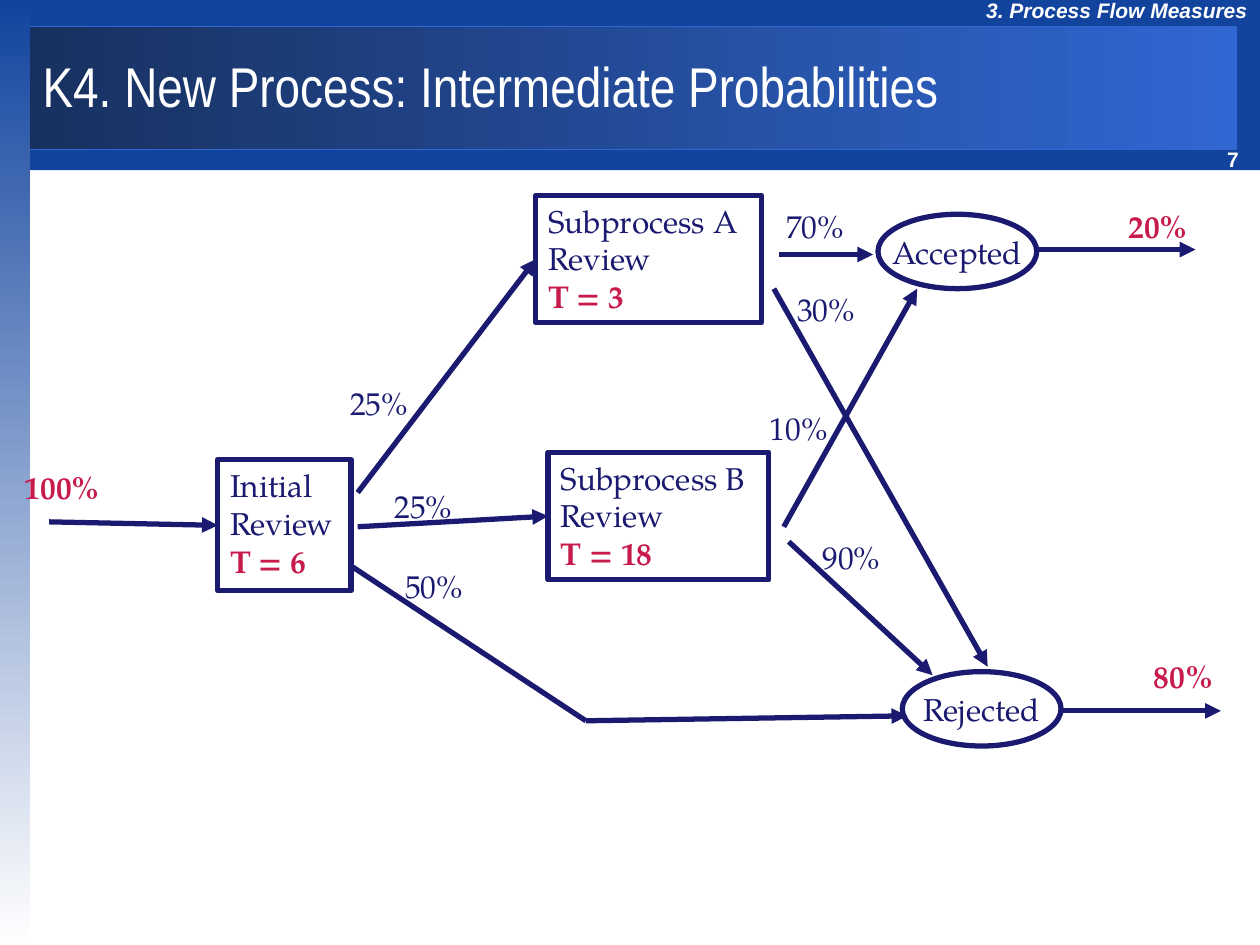
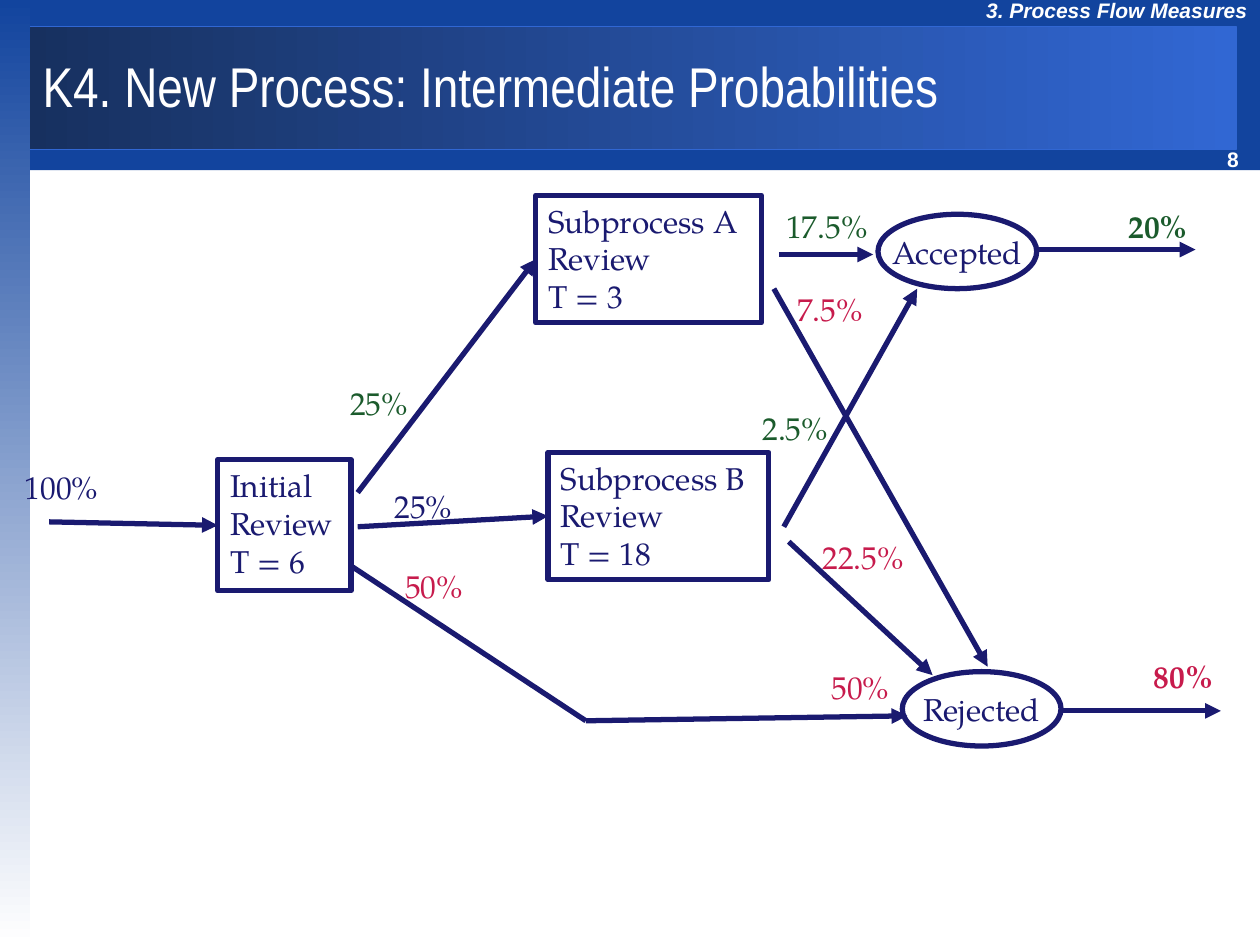
from lxml import etree
from pptx import Presentation
from pptx.dml.color import RGBColor
from pptx.enum import shapes, text
from pptx.oxml import ns
from pptx.util import Cm, Pt

NAVY, CRIMSON, GREEN, WHITE = "1A1A70", "C71B4C", "1B5B2C", "FFFFFF"
BAND, BAND_EDGE, BAND_DARK = "12449E", "3167D3", "17305F"

BODY = {"name": "TeX Gyre Pagella", "size": Pt(18), "color": NAVY}
TITLE = {"name": "Arial Narrow", "size": Pt(32), "color": WHITE}
SMALL = {"name": "Arial", "size": Pt(12), "color": WHITE, "bold": True}

STEPS = {
    "Initial": ((4.39, 9.27, 2.69, 2.64), ["Initial", "Review", "T = 6"]),
    "A": ((10.8, 3.94, 4.55, 2.57), ["Subprocess A", "Review", "T = 3"]),
    "B": ((11.05, 9.12, 4.45, 2.57), ["Subprocess B", "Review", "T = 18"]),
}
OUTCOMES = {"Accepted": (17.7, 4.32), "Rejected": (18.19, 13.54)}

# Start, end, step whose left side the arrow joins
ARROWS = [
    ((0.99, 10.52), (4.29, 10.52), "Initial"),
    ((7.21, 9.93), (10.8, 5.13), "A"),
    ((7.21, 10.62), (11, 10.52), "B"),
    ((11.81, 14.53), (18.29, 14.43), None),
    ((15.7, 5.13), (17.6, 5.13), None),
    ((15.6, 5.82), (19.91, 13.44), None),
    ((15.8, 10.62), (18.49, 5.82), None),
    ((15.9, 10.92), (18.8, 13.61), None),
    ((20.9, 5.03), (24.1, 5.03), None),
    ((21.41, 14.33), (24.61, 14.33), None),
]
BYPASS = ((7.11, 11.43), (11.81, 14.53))

# x, y, share of the label's width that lies left of x
LABEL_SPOTS = {
    "in": (0.25, 9.32, 0),
    "to A": (6.81, 7.62, 0),
    "to B": (7.7, 9.7, 0),
    "straight to rejected": (7.92, 11.3, 0),
    "bypass end": (16.51, 13.34, 0),
    "A accepted": (15.6, 4.04, 0),
    "A rejected": (15.82, 5.72, 0),
    "B accepted": (16.97, 8.13, 1),
    "B rejected": (16.33, 10.72, 0),
    "all accepted": (22.5, 4.04, 0),
    "all rejected": (23.01, 13.13, 0),
}

BRANCH_SHARES = {
    "in": ("100%", CRIMSON, True),
    "to A": ("25%", NAVY, False),
    "to B": ("25%", NAVY, False),
    "straight to rejected": ("50%", NAVY, False),
    "A accepted": ("70%", NAVY, False),
    "A rejected": ("30%", NAVY, False),
    "B accepted": ("10%", NAVY, False),
    "B rejected": ("90%", NAVY, False),
    "all accepted": ("20%", CRIMSON, True),
    "all rejected": ("80%", CRIMSON, True),
}
TOTAL_SHARES = {
    "in": ("100%", NAVY, False),
    "to A": ("25%", GREEN, False),
    "to B": ("25%", NAVY, False),
    "straight to rejected": ("50%", CRIMSON, False),
    "bypass end": ("50%", CRIMSON, False),
    "A accepted": ("17.5%", GREEN, False),
    "A rejected": ("7.5%", CRIMSON, False),
    "B accepted": ("2.5%", GREEN, False),
    "B rejected": ("22.5%", CRIMSON, False),
    "all accepted": ("20%", GREEN, True),
    "all rejected": ("80%", CRIMSON, True),
}


def rgb(value):
    return RGBColor.from_string(value)


def cm(values):
    return [Cm(v) for v in values]


def write(tf, lines, **frame):
    """Fill a text frame; each line is (text, format)."""
    for name, value in {"word_wrap": False, **frame}.items():
        setattr(tf, name, value)
    for i, (line, fmt) in enumerate(lines):
        p = tf.add_paragraph() if i else tf.paragraphs[0]
        p.alignment = text.PP_ALIGN.LEFT
        r = p.add_run()
        r.text = line
        for name, value in fmt.items():
            if name == "color":
                r.font.color.rgb = rgb(value)
            else:
                setattr(r.font, name, value)


def add_text(s, box, line, fmt, **frame):
    tf = s.shapes.add_textbox(*cm(box)).text_frame
    write(tf, [(line, fmt)], **frame)


def add_box(s, kind, box, fill=None, line=None, width=3):
    """Add a shape; fill is None, a colour, or (start, end, angle)."""
    sp = s.shapes.add_shape(kind, *cm(box))
    sp.shadow.inherit = False
    if fill is None:
        sp.fill.background()
    elif isinstance(fill, str):
        sp.fill.solid()
        sp.fill.fore_color.rgb = rgb(fill)
    else:
        sp.fill.gradient()
        sp.fill.gradient_angle = fill[2]
        for stop, colour in zip(sp.fill.gradient_stops, fill):
            stop.color.rgb = rgb(colour)
    if line:
        sp.line.color.rgb = rgb(line)
        sp.line.width = Pt(width)
    else:
        sp.line.fill.background()
    return sp


def add_line(s, start, end, target=None, arrow=True):
    c = s.shapes.add_connector(shapes.MSO_CONNECTOR.STRAIGHT, *cm(start + end))
    c.line.color.rgb = rgb(NAVY)
    c.line.width = Pt(3)
    if arrow:
        etree.SubElement(c.line._get_or_add_ln(), ns.qn("a:tailEnd"), type="triangle")
    etree.SubElement(c._element.spPr, ns.qn("a:effectLst"))
    if target is not None:
        c.end_connect(target, 1)


def add_step(s, box, lines, time_fmt):
    sp = add_box(s, shapes.MSO_SHAPE.RECTANGLE, box, line=NAVY)
    formats = [BODY, BODY, {**BODY, **time_fmt}]
    write(sp.text_frame, zip(lines, formats),
          vertical_anchor=text.MSO_ANCHOR.TOP,
          auto_size=text.MSO_AUTO_SIZE.SHAPE_TO_FIT_TEXT)
    return sp


def add_outcome(s, name, corner):
    sp = add_box(s, shapes.MSO_SHAPE.OVAL, corner + (3.2, 1.5), line=NAVY)
    write(sp.text_frame, [(name, BODY)], vertical_anchor=text.MSO_ANCHOR.MIDDLE)
    sp.text_frame.paragraphs[0].alignment = text.PP_ALIGN.CENTER


def add_share(s, spot, share, colour, bold):
    x, y, left_part = LABEL_SPOTS[spot]
    digits = sum(ch.isdigit() for ch in share)
    width = 1.04 + 0.33 * digits + 0.15 * share.count(".")
    add_text(s, (x - left_part * width, y, width, 1.02), share,
             {**BODY, "color": colour, "bold": bold})


def add_frame(s, title, number):
    """Draw the bands, title, chapter line and page number."""
    rect = shapes.MSO_SHAPE.RECTANGLE
    add_box(s, rect, (0.51, 0, 24.89, 3.43), BAND)
    add_box(s, rect, (0.51, 0.53, 24.41, 2.49), (BAND_DARK, BAND_EDGE, 0), BAND_EDGE, 0.75)
    add_box(s, rect, (0, 0, 0.61, 19.05), (BAND, WHITE, 270))
    add_text(s, (24.49, 2.82, 1.02, 0.76), str(number), SMALL)
    add_text(s, (19.63, -0.18, 5.77, 0.76), "3. Process Flow Measures",
             {**SMALL, "italic": True})
    add_text(s, (0.61, 0.53, 24.41, 2.39), title, TITLE,
             word_wrap=True, vertical_anchor=text.MSO_ANCHOR.MIDDLE)


def add_flow(s, shares, time_fmt):
    steps = {name: add_step(s, box, lines, time_fmt)
             for name, (box, lines) in STEPS.items()}
    for name, corner in OUTCOMES.items():
        add_outcome(s, name, corner)
    for start, end, target in ARROWS:
        add_line(s, start, end, steps.get(target))
    add_line(s, *BYPASS, arrow=False)
    for spot, share in shares.items():
        add_share(s, spot, *share)


def main():
    prs = Presentation()
    prs.slide_width, prs.slide_height = Cm(25.4), Cm(19.05)
    slides = [(BRANCH_SHARES, {"color": CRIMSON, "bold": True}), (TOTAL_SHARES, {})]
    for number, (shares, time_fmt) in enumerate(slides, 7):
        s = prs.slides.add_slide(prs.slide_layouts[6])
        add_frame(s, "K4. New Process: Intermediate Probabilities", number)
        add_flow(s, shares, time_fmt)
    prs.save("out.pptx")


if __name__ == "__main__":
    main()
